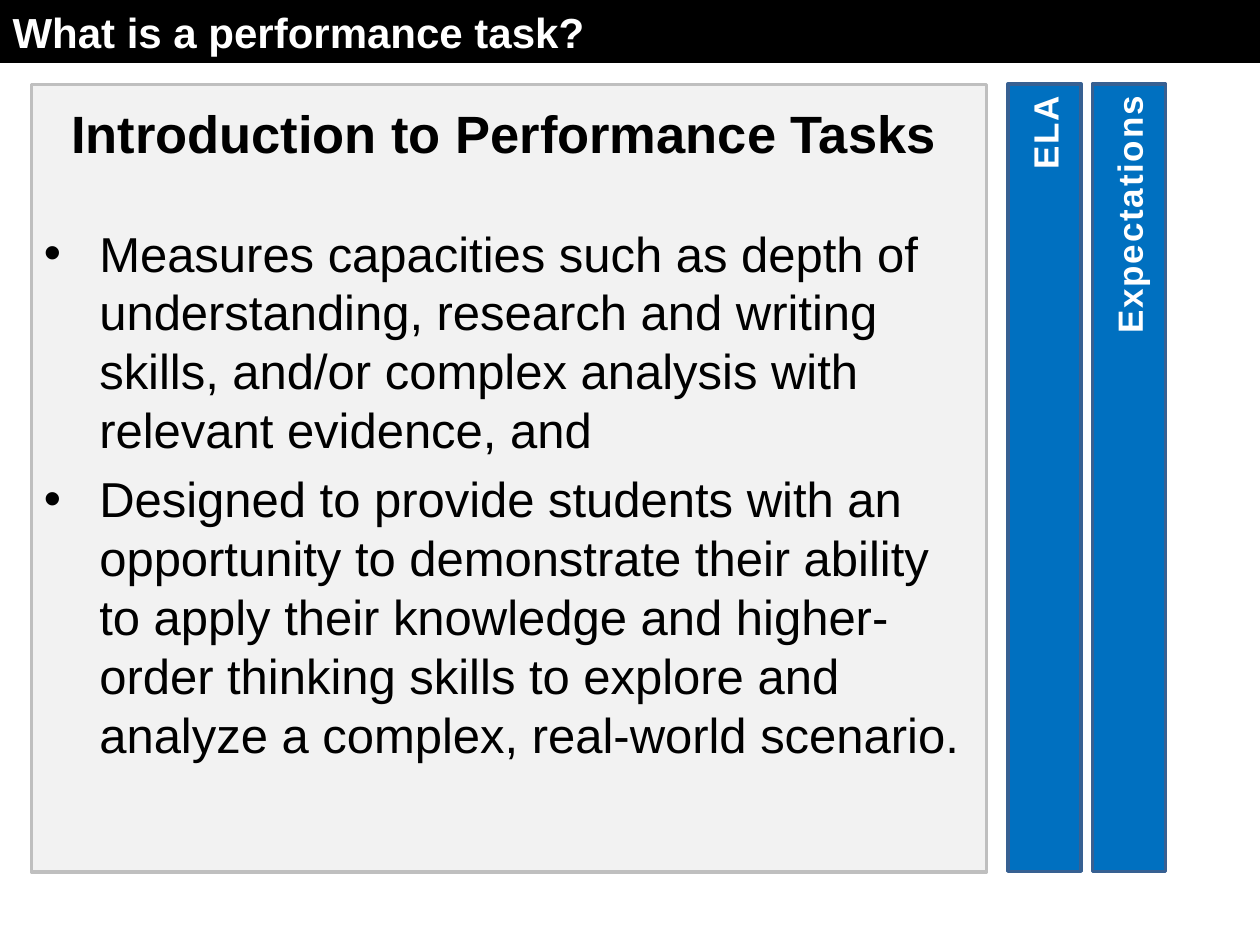
from pptx import Presentation
from pptx.dml.color import RGBColor
from pptx.enum.shapes import MSO_SHAPE as Shape
from pptx.enum.text import MSO_ANCHOR as Anchor, MSO_AUTO_SIZE as Fit, PP_ALIGN as Align
from pptx.oxml.xmlchemy import OxmlElement as Element
from pptx.util import Inches, Pt

BLACK = RGBColor(0x00, 0x00, 0x00)
WHITE = RGBColor(0xFF, 0xFF, 0xFF)
PALE = RGBColor(0xF2, 0xF2, 0xF2)
GREY = RGBColor(0xBF, 0xBF, 0xBF)
BLUE = RGBColor(0x00, 0x70, 0xC0)
NAVY = RGBColor(0x37, 0x60, 0x92)

HEAD = "Introduction to Performance Tasks"
POINTS = [
    "Measures capacities such as depth of understanding, research and writing "
    "skills, and/or complex analysis with relevant evidence, and",
    "Designed to provide students with an opportunity to demonstrate their ability "
    "to apply their knowledge and higher-order thinking skills to explore and "
    "analyze a complex, real-world scenario.",
]
TABS = ["ELA", "Expectations"]


def style(para, size, color, bold, align):
    para.alignment = align
    font = para.font
    font.name, font.size, font.bold = "Arial", Pt(size), bold
    font.color.rgb = color


def add_box(left, top, width, height, fill, line):
    box = slide.shapes.add_shape(
        Shape.RECTANGLE, Inches(left), Inches(top), Inches(width), Inches(height))
    box.shadow.inherit = False
    box.fill.solid()
    box.fill.fore_color.rgb = fill
    box.line.color.rgb = line
    box.line.width = Pt(2)
    return box


deck = Presentation()
deck.slide_width, deck.slide_height = Inches(10), Inches(7.5)
slide = deck.slides.add_slide(deck.slide_layouts[5])

# Title bar
title = slide.shapes.title
title.left, title.top = Inches(0), Inches(0)
title.width, title.height = Inches(10), Inches(0.5)
title.fill.solid()
title.fill.fore_color.rgb = BLACK
frame = title.text_frame
frame.text = "What is a performance task?"
frame.auto_size = Fit.NONE
frame.vertical_anchor = Anchor.TOP
style(frame.paragraphs[0], 24, WHITE, True, Align.LEFT)

# Main panel
add_box(0.25, 0.67, 7.58, 6.25, PALE, GREY)

# Heading and bullets
body = slide.shapes.add_textbox(Inches(0.25), Inches(0.75), Inches(7.5), Inches(5.44))
frame = body.text_frame
frame.word_wrap = True
para = frame.paragraphs[0]
para.text = HEAD
para.space_after = Pt(34)
style(para, 30, BLACK, True, Align.CENTER)
for point in POINTS:
    para = frame.add_paragraph()
    para.text = point
    para.space_after = Pt(6)
    props = para._p.get_or_add_pPr()
    props.set("marL", str(Inches(0.44)))
    props.set("indent", str(-Inches(0.44)))
    face = Element("a:buFont")
    face.set("typeface", "Arial")
    mark = Element("a:buChar")
    mark.set("char", "•")
    props.extend([face, mark])
    style(para, 28, BLACK, False, Align.LEFT)

# Side tabs, turned to read upwards
long, thin = 6.25, 0.58
for i, label in enumerate(TABS):
    mid = 8.29 + i * 0.67
    tab = add_box(mid - long / 2, 3.5, long, thin, BLUE, NAVY)
    tab.rotation = 270
    frame = tab.text_frame
    frame.text = label
    frame.vertical_anchor = Anchor.MIDDLE
    para = frame.paragraphs[0]
    style(para, 20, WHITE, True, Align.RIGHT)
    para.runs[0]._r.get_or_add_rPr().set("spc", "100")

deck.save("out.pptx")
